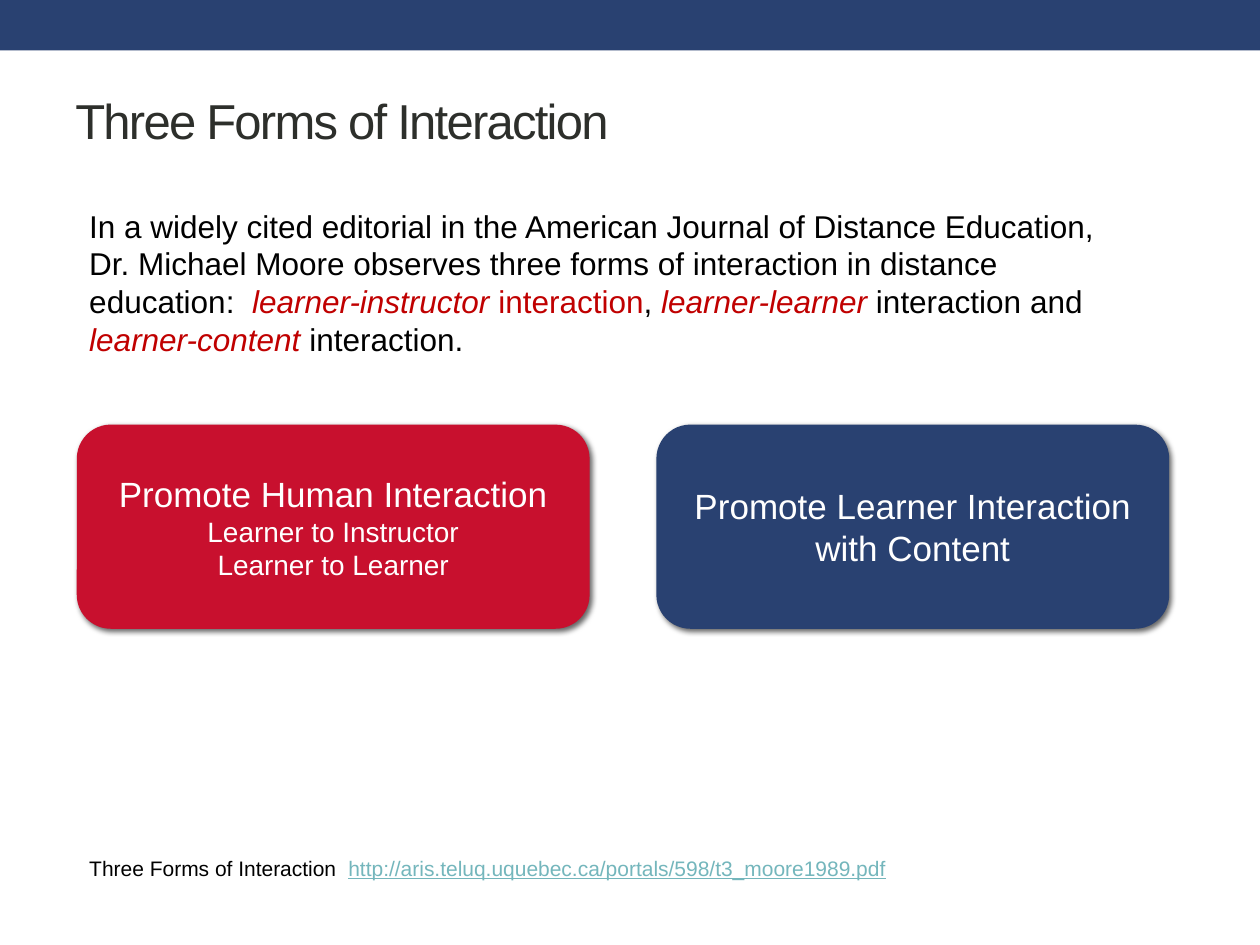
from dataclasses import dataclass

from lxml.etree import SubElement
from pptx import Presentation
from pptx.dml.color import RGBColor
from pptx.enum.shapes import MSO_SHAPE as Shape
from pptx.enum.text import MSO_ANCHOR as Anchor, MSO_AUTO_SIZE as Fit, PP_ALIGN as Align
from pptx.oxml.ns import qn
from pptx.util import Inches, Pt

NAVY = RGBColor(0x29, 0x41, 0x71)
RED = RGBColor(0xC8, 0x10, 0x2E)
DARK_RED = RGBColor(0xC0, 0x00, 0x00)
INK = RGBColor(0x2D, 0x2F, 0x2B)
TEAL = RGBColor(0x74, 0xB6, 0xBC)
BLACK = RGBColor(0x00, 0x00, 0x00)
WHITE = RGBColor(0xFF, 0xFF, 0xFF)
FACE = "Arial"
LEFT = 0.61


@dataclass
class Span:
    text: str
    color: RGBColor = BLACK
    slant: bool = False
    under: bool = False


@dataclass
class Line:
    text: str
    size: int


@dataclass
class Card:
    left: float
    fill: RGBColor
    lines: list[Line]


CARDS = [
    Card(5.21, NAVY, [Line("Promote Learner Interaction with Content", 20)]),
    Card(LEFT, RED, [
        Line("Promote Human Interaction", 20),
        Line("Learner to Instructor", 16),
        Line("Learner to Learner", 16),
    ]),
]

INTRO = [
    Span("In a widely cited editorial in the American Journal of Distance Education, "
         "Dr. Michael Moore observes three forms of interaction in distance education:  "),
    Span("learner-instructor", DARK_RED, slant=True),
    Span(" interaction", DARK_RED),
    Span(", "),
    Span("learner-learner ", DARK_RED, slant=True),
    Span("interaction and "),
    Span("learner-content ", DARK_RED, slant=True),
    Span("interaction."),
]

SOURCE = [
    Span("Three Forms of Interaction  "),
    Span("http://aris.teluq.uquebec.ca/portals/598/t3_moore1989.pdf", TEAL, under=True),
]


def style(font, size: int, color: RGBColor) -> None:
    font.name = FACE
    font.size = Pt(size)
    font.color.rgb = color


def add_block(slide, kind, left: float, top: float, width: float, height: float,
              fill: RGBColor):
    block = slide.shapes.add_shape(
        kind, Inches(left), Inches(top), Inches(width), Inches(height))
    block.shadow.inherit = False
    block.fill.solid()
    block.fill.fore_color.rgb = fill
    block.line.fill.background()
    return block


def add_shade(block) -> None:
    effects = block._element.spPr.find(qn("a:effectLst"))
    shade = SubElement(effects, qn("a:outerShdw"), blurRad=str(Pt(3)),
                       dist=str(Pt(2)), dir="2700000", algn="tl", rotWithShape="0")
    color = SubElement(shade, qn("a:srgbClr"), val="000000")
    SubElement(color, qn("a:alpha"), val="60000")


def add_card(slide, card: Card) -> None:
    block = add_block(slide, Shape.ROUNDED_RECTANGLE, card.left, 3.37, 4.07, 1.62, card.fill)
    add_shade(block)
    frame = block.text_frame
    frame.word_wrap = True
    frame.vertical_anchor = Anchor.MIDDLE
    frame.text = "\n".join(line.text for line in card.lines)
    for para, line in zip(frame.paragraphs, card.lines):
        para.alignment = Align.CENTER
        style(para.runs[0].font, line.size, WHITE)


def add_text(slide, left: float, top: float, width: float, height: float,
             spans: list[Span], size: int, wrap: bool = True):
    box = slide.shapes.add_textbox(
        Inches(left), Inches(top), Inches(width), Inches(height))
    frame = box.text_frame
    frame.word_wrap = wrap
    frame.auto_size = Fit.SHAPE_TO_FIT_TEXT
    for span in spans:
        run = frame.paragraphs[0].add_run()
        run.text = span.text
        style(run.font, size, span.color)
        run.font.italic = span.slant
        run.font.underline = span.under
    return frame


def add_title(slide) -> None:
    frame = add_text(slide, 0.5, 0.58, 9, 0.74,
                     [Span("Three Forms of Interaction", INK)], 28)
    frame.auto_size = Fit.NONE
    frame.vertical_anchor = Anchor.MIDDLE
    frame.paragraphs[0].runs[0].font._element.set("spc", "-100")


def main() -> None:
    deck = Presentation()
    deck.slide_width = Inches(10)
    deck.slide_height = Inches(7.5)
    slide = deck.slides.add_slide(deck.slide_layouts[6])
    add_block(slide, Shape.RECTANGLE, 0, 0, 10, 0.4, NAVY)
    add_title(slide)
    for card in CARDS:
        add_card(slide, card)
    add_text(slide, LEFT, 1.59, 8.38, 1.31, INTRO, 18)
    add_text(slide, LEFT, 6.74, 6.58, 0.3, SOURCE, 12, wrap=False)
    deck.save("out.pptx")


if __name__ == "__main__":
    main()
